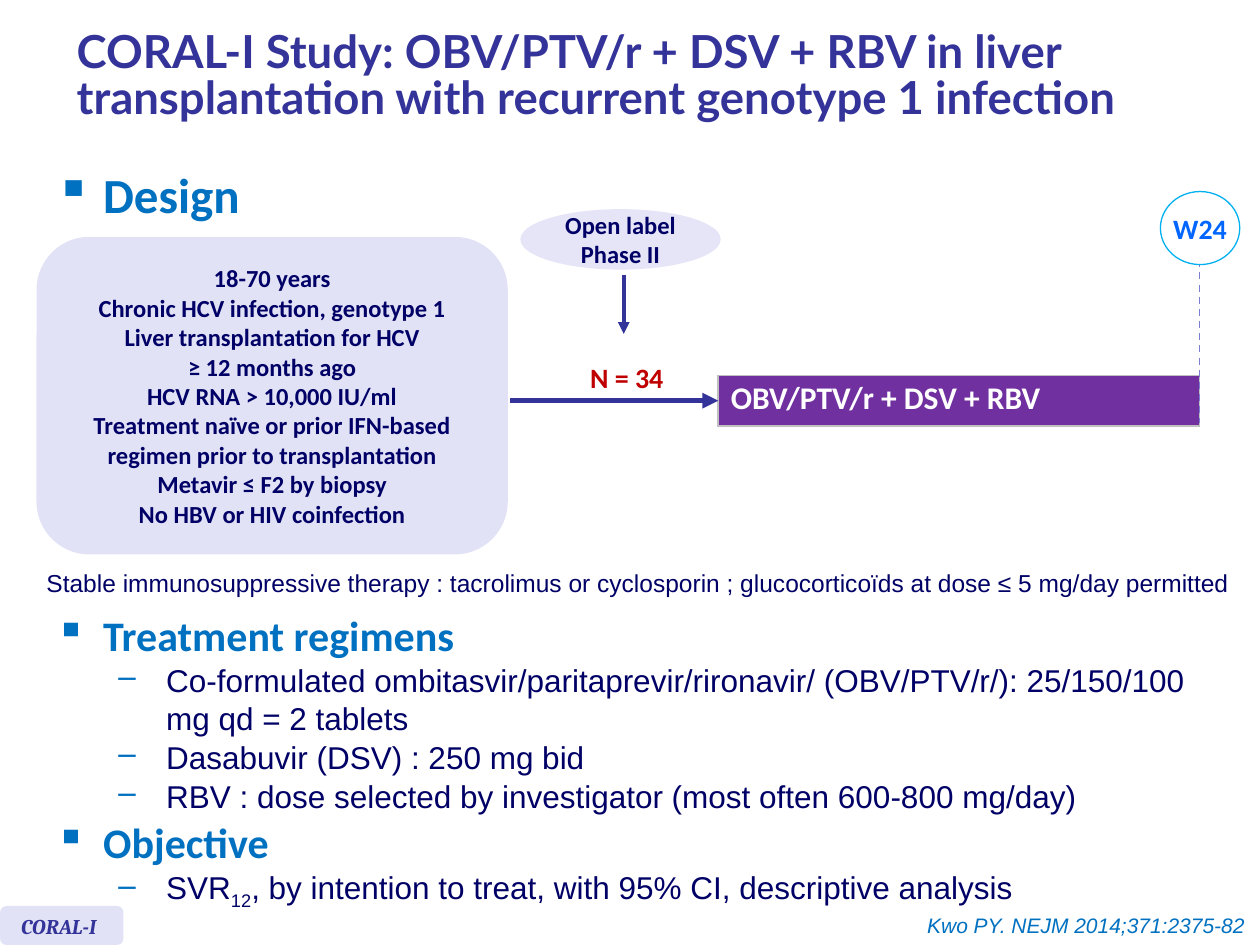
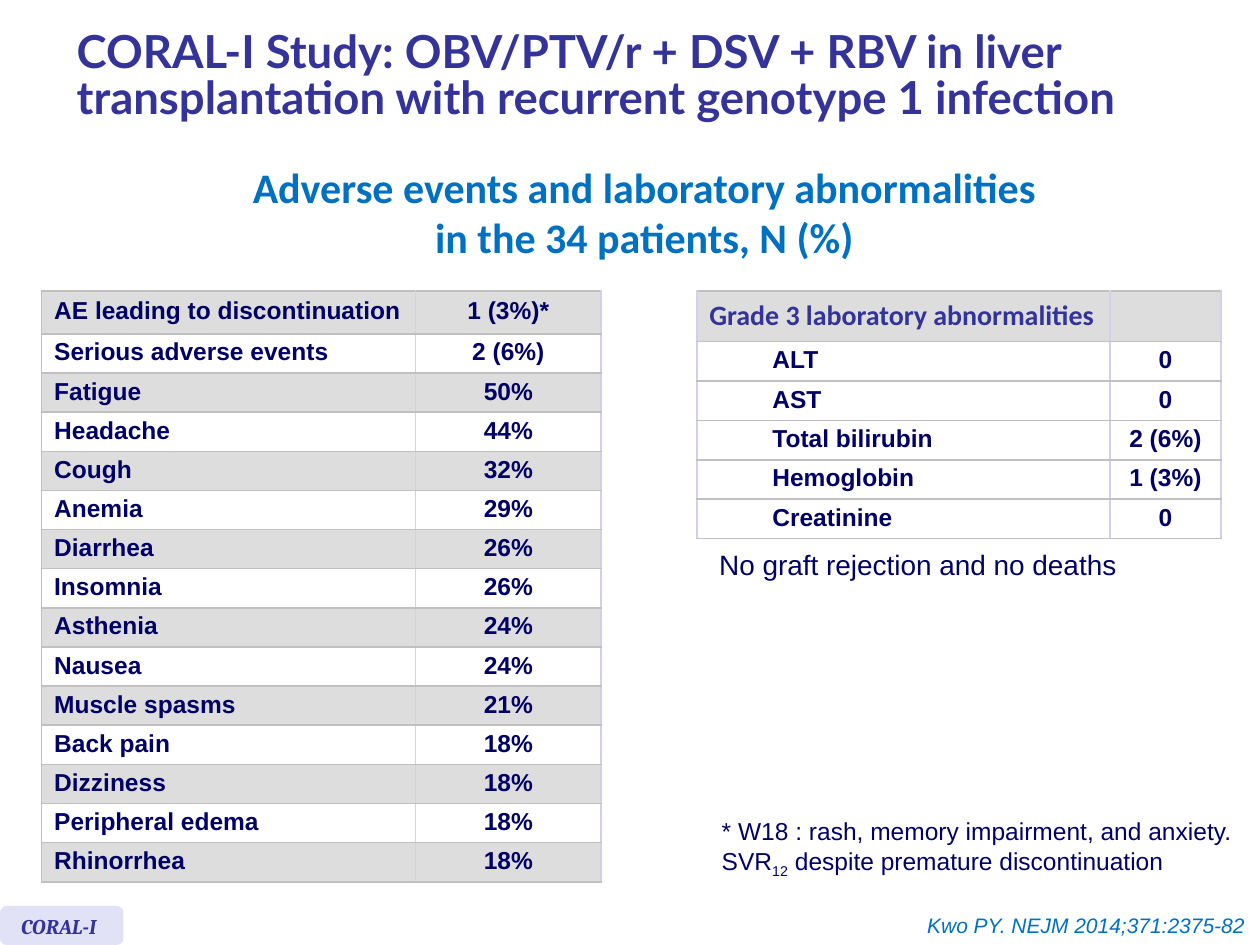
from dataclasses import dataclass

from lxml import etree
from pptx import Presentation
from pptx.dml.color import RGBColor
from pptx.enum.dml import MSO_LINE
from pptx.enum.shapes import MSO_CONNECTOR, MSO_SHAPE
from pptx.enum.text import MSO_ANCHOR, PP_ALIGN
from pptx.oxml.ns import qn
from pptx.util import Inches, Pt

LEFT, CENTER, RIGHT = PP_ALIGN.LEFT, PP_ALIGN.CENTER, PP_ALIGN.RIGHT
TOP, MIDDLE = MSO_ANCHOR.TOP, MSO_ANCHOR.MIDDLE
OVAL, ROUNDED = MSO_SHAPE.OVAL, MSO_SHAPE.ROUNDED_RECTANGLE
DASH = MSO_LINE.DASH
STRAIGHT = MSO_CONNECTOR.STRAIGHT
COLS, ROWS = 100, 75
UNIT = Inches(0.1)


class Theme:
    indigo, navy, blue = "333399", "000066", "0070C0"
    white, red, purple = "FFFFFF", "C00000", "7030A0"
    lilac, mist, band = "E2E2F6", "E5E5F7", "DDDDDD"
    gray, pale, dash = "C0C0C0", "D0D0F0", "7E7ED4"
    sky, week = "00B0F0", "0066FF"

    @staticmethod
    def font(name, size, color, bold=False, italic=False):
        return {"name": name, "size": Pt(size), "bold": bold, "italic": italic, "color": color}


T = Theme
TITLE = T.font("Lato", 26, T.indigo, True)
DESIGN = T.font("Calibri", 28, T.blue, True)
HEADING = T.font("Calibri", 24, T.blue, True)
BODY = T.font("Arial", 18, T.navy)
NOTE = T.font("Arial", 14, T.navy)
REMARK = T.font("Arial", 16, T.navy)
CELL = T.font("Arial", 14, T.navy, True)
CELL_HEAD = T.font("Calibri", 16, T.indigo, True)
CARD = T.font("Calibri", 14, T.navy, True)
COUNT = T.font("Calibri", 16, T.red, True)
WEEK = T.font("Calibri", 16, T.week, True)
ARM = T.font("Calibri", 18, T.white, True)
TAG = T.font("Cambria", 12, T.indigo, True, True)
CITATION = T.font("Arial", 12, T.blue, italic=True)


@dataclass
class Box:
    x: float
    y: float
    w: float
    h: float

    def sub(self, x, y, w, h):
        return Box(self.x + x, self.y + y, w, h)

    def emu(self):
        return [round(v * UNIT) for v in (self.x, self.y, self.w, self.h)]


PAGE = Box(0, 0, COLS, ROWS)


def rgb(color):
    return RGBColor.from_string(color)


def child(parent, tag, **attrs):
    return etree.SubElement(parent, qn(tag), attrs)


def write(p, text, style, **fmt):
    for key, value in fmt.items():
        setattr(p, key, value)
    for i, part in enumerate(text.split("_")):
        r = p.add_run()
        r.text = part
        for key, value in style.items():
            if key == "color":
                r.font.color.rgb = rgb(value)
            else:
                setattr(r.font, key, value)
        if i % 2:
            r.font._element.set("baseline", "-25000")


def add_bullet(p, char, indent):
    pPr = p._p.get_or_add_pPr()
    pPr.set("marL", str(Inches(indent)))
    pPr.set("indent", str(Inches(-0.38)))
    child(child(pPr, "a:buClr"), "a:srgbClr", val=T.blue)
    child(pPr, "a:buChar", char=char)


def paragraphs(tf):
    yield tf.paragraphs[0]
    while True:
        yield tf.add_paragraph()


def fill_text(tf, lines, style, anchor=TOP, wrap=True, **fmt):
    tf.word_wrap = wrap
    tf.vertical_anchor = anchor
    for text, p in zip(lines, paragraphs(tf)):
        write(p, text, style, **fmt)


def add_text(shapes, box, lines, style, **fmt):
    sp = shapes.add_textbox(*box.emu())
    fill_text(sp.text_frame, lines, style, **fmt)


def add_bullets(shapes, box, items):
    tf = shapes.add_textbox(*box.emu()).text_frame
    tf.word_wrap = True
    for i, ((level, text, style), p) in enumerate(zip(items, paragraphs(tf))):
        p.level = level
        p.space_before = Pt(0.7 if i else 0)
        add_bullet(p, "▪–"[level], 0.38 + level * 0.5)
        write(p, text, style)


def add_panel(shapes, kind, box, fill, line=None, lines=(), style=None, wrap=True):
    sp = shapes.add_shape(kind, *box.emu())
    sp.shadow.inherit = False
    sp.fill.solid()
    sp.fill.fore_color.rgb = rgb(fill)
    if line:
        sp.line.color.rgb = rgb(line)
        sp.line.width = Pt(0.75)
    else:
        sp.line.fill.background()
    fill_text(sp.text_frame, lines, style, MIDDLE, wrap, alignment=CENTER)


def add_line(shapes, box, color, width, dash=None, arrow=False):
    x, y, w, h = box.emu()
    cn = shapes.add_connector(STRAIGHT, x, y, x + w, y + h)
    cn.line.color.rgb = rgb(color)
    cn.line.width = Pt(width)
    if dash:
        cn.line.dash_style = dash
    spPr = cn.element.spPr
    if arrow:
        child(spPr.find(qn("a:ln")), "a:tailEnd", type="triangle")
    child(spPr, "a:effectLst")


def style_cell(cell, fill, left, right):
    tcPr = cell._tc.get_or_add_tcPr()
    for side, color in zip("LRTB", (left, right, T.gray, T.gray)):
        ln = child(tcPr, f"a:ln{side}", w=str(Pt(1)))
        child(child(ln, "a:solidFill"), "a:srgbClr", val=color)
    cell.fill.solid()
    cell.fill.fore_color.rgb = rgb(fill)
    cell.vertical_anchor = MIDDLE


def add_grid(shapes, box, widths, heights):
    frame = shapes.add_table(len(heights), len(widths), *box.emu())
    tb = frame.table
    tb.first_row = tb.horz_banding = False
    for part, sizes, key in ((tb.columns, widths, "width"), (tb.rows, heights, "height")):
        for item, size in zip(part, sizes):
            setattr(item, key, round(size * UNIT))
    return tb


def add_rate_table(shapes, box, widths, rows, banded, edge, head=CELL, indent=0):
    row_h = (box.h - 3.4) / (len(rows) - 1)
    tb = add_grid(shapes, box, widths, [3.4] + [row_h] * (len(rows) - 1))
    for i, (label, value) in enumerate(rows):
        fill = T.band if i == 0 or banded and i % 2 == 0 else T.white
        for j, text in enumerate((label, value)):
            cell = tb.cell(i, j)
            style_cell(cell, fill, T.pale if j else edge, T.pale)
            if text:
                p = cell.text_frame.paragraphs[0]
                if indent and i and j == 0:
                    p._p.get_or_add_pPr().set("marL", str(Inches(indent)))
                write(p, text, CELL if i else head, line_spacing=0.9,
                      alignment=CENTER if j else LEFT)


def add_frame(shapes, box):
    add_text(shapes, box.sub(5.1, 0.8, 94.9, 10.7),
             ["CORAL-I Study: OBV/PTV/r + DSV + RBV in liver transplantation"
              " with recurrent genotype 1 infection"],
             TITLE, anchor=MIDDLE, line_spacing=0.85)
    add_text(shapes, box.sub(66.8, 71.9, 33, 3), ["Kwo PY. NEJM 2014;371:2375-82"],
             CITATION, alignment=RIGHT)
    tag = shapes.add_group_shape().shapes
    add_panel(tag, ROUNDED, box.sub(0, 71.9, 9.8, 3.1), T.lilac)
    add_text(tag, box.sub(0.7, 72, 10.6, 3), ["CORAL-I"], TAG)


def add_trial_diagram(shapes, box):
    arm = box.sub(54.1, 14.6, 38.2, 4)
    tb = add_grid(shapes, arm, [arm.w], [arm.h])
    style_cell(tb.cell(0, 0), T.purple, T.gray, T.gray)
    write(tb.cell(0, 0).text_frame.paragraphs[0], "OBV/PTV/r + DSV + RBV", ARM, line_spacing=0.8)
    add_panel(shapes, OVAL, box.sub(38.4, 1.4, 15.9, 4.8), T.mist,
              lines=["Open label", "Phase II"], style=CARD, wrap=False)
    add_panel(shapes, ROUNDED, box.sub(0, 3.6, 37.4, 25.2), T.lilac, lines=[
        "18-70 years",
        "Chronic HCV infection, genotype 1",
        "Liver transplantation for HCV",
        "≥ 12 months ago",
        "HCV RNA > 10,000 IU/ml",
        "Treatment naïve or prior IFN-based regimen prior to transplantation",
        "Metavir ≤ F2 by biopsy",
        "No HBV or HIV coinfection",
    ], style=CARD)
    add_line(shapes, box.sub(92.3, 4.5, 0, 13.9), T.dash, 1, dash=DASH)
    add_panel(shapes, OVAL, box.sub(89.2, 0, 6.3, 5.8), T.white, T.sky, ["W24"], WEEK, False)
    add_text(shapes, box.sub(42.9, 12.9, 7.9, 3.7), ["N = 34"], COUNT,
             wrap=False, alignment=CENTER)
    add_line(shapes, box.sub(37.6, 16.6, 16.5, 0), T.indigo, 3, arrow=True)
    add_line(shapes, box.sub(46.6, 6.6, 0, 4.7), T.indigo, 2.25, arrow=True)


def build_design(sl):
    shapes = sl.shapes
    add_frame(shapes, PAGE)
    add_bullets(shapes, PAGE.sub(3.4, 12.6, 19.8, 6.3), [(0, "Design", DESIGN)])
    add_trial_diagram(shapes, PAGE.sub(2.9, 15.2, 95.5, 28.8))
    add_text(shapes, PAGE.sub(2.7, 44.3, 96.2, 3.5),
             ["Stable immunosuppressive therapy : tacrolimus or cyclosporin ;"
              " glucocorticoïds at dose ≤ 5 mg/day permitted"], NOTE, line_spacing=Pt(19))
    add_bullets(shapes, PAGE.sub(3.4, 47.9, 93.8, 24.3), [
        (0, "Treatment regimens", HEADING),
        (1, "Co-formulated ombitasvir/paritaprevir/rironavir/ (OBV/PTV/r/):"
            " 25/150/100 mg qd = 2 tablets", BODY),
        (1, "Dasabuvir (DSV) : 250 mg bid", BODY),
        (1, "RBV : dose selected by investigator (most often 600-800 mg/day)", BODY),
        (0, "Objective", HEADING),
        (1, "SVR_12_, by intention to treat, with 95% CI, descriptive analysis", BODY),
    ])


def build_safety(sl):
    shapes = sl.shapes
    add_frame(shapes, PAGE)
    add_text(shapes, PAGE.sub(3.3, 12.3, 95.7, 9.1),
             ["Adverse events and laboratory abnormalities", "in the 34 patients, N (%)"],
             HEADING, alignment=CENTER)
    add_rate_table(shapes, PAGE.sub(3.3, 23.1, 44.4, 45.4), [29.7, 14.7], [
        ("AE leading to discontinuation", "1 (3%)*"),
        ("Serious adverse events", "2 (6%)"),
        ("Fatigue", "50%"),
        ("Headache", "44%"),
        ("Cough", "32%"),
        ("Anemia", "29%"),
        ("Diarrhea", "26%"),
        ("Insomnia", "26%"),
        ("Asthenia", "24%"),
        ("Nausea", "24%"),
        ("Muscle spasms", "21%"),
        ("Back pain", "18%"),
        ("Dizziness", "18%"),
        ("Peripheral edema", "18%"),
        ("Rhinorrhea", "18%"),
    ], True, T.gray)
    add_rate_table(shapes, PAGE.sub(55.3, 23.1, 41.6, 19.05), [32.8, 8.8], [
        ("Grade 3 laboratory abnormalities", ""),
        ("ALT", "0"),
        ("AST", "0"),
        ("Total bilirubin", "2 (6%)"),
        ("Hemoglobin", "1 (3%)"),
        ("Creatinine", "0"),
    ], False, T.pale, CELL_HEAD, 0.5)
    add_text(shapes, PAGE.sub(56.1, 43, 36.3, 3.7), ["No graft rejection and no deaths"], REMARK)
    add_text(shapes, PAGE.sub(56.3, 64.3, 43, 5.7),
             ["* W18 : rash, memory impairment, and anxiety.",
              "SVR_12_ despite premature discontinuation"], NOTE)


def main():
    prs = Presentation()
    prs.slide_width, prs.slide_height = COLS * UNIT, ROWS * UNIT
    for build in (build_design, build_safety):
        build(prs.slides.add_slide(prs.slide_layouts[6]))
    prs.save("out.pptx")


if __name__ == "__main__":
    main()
